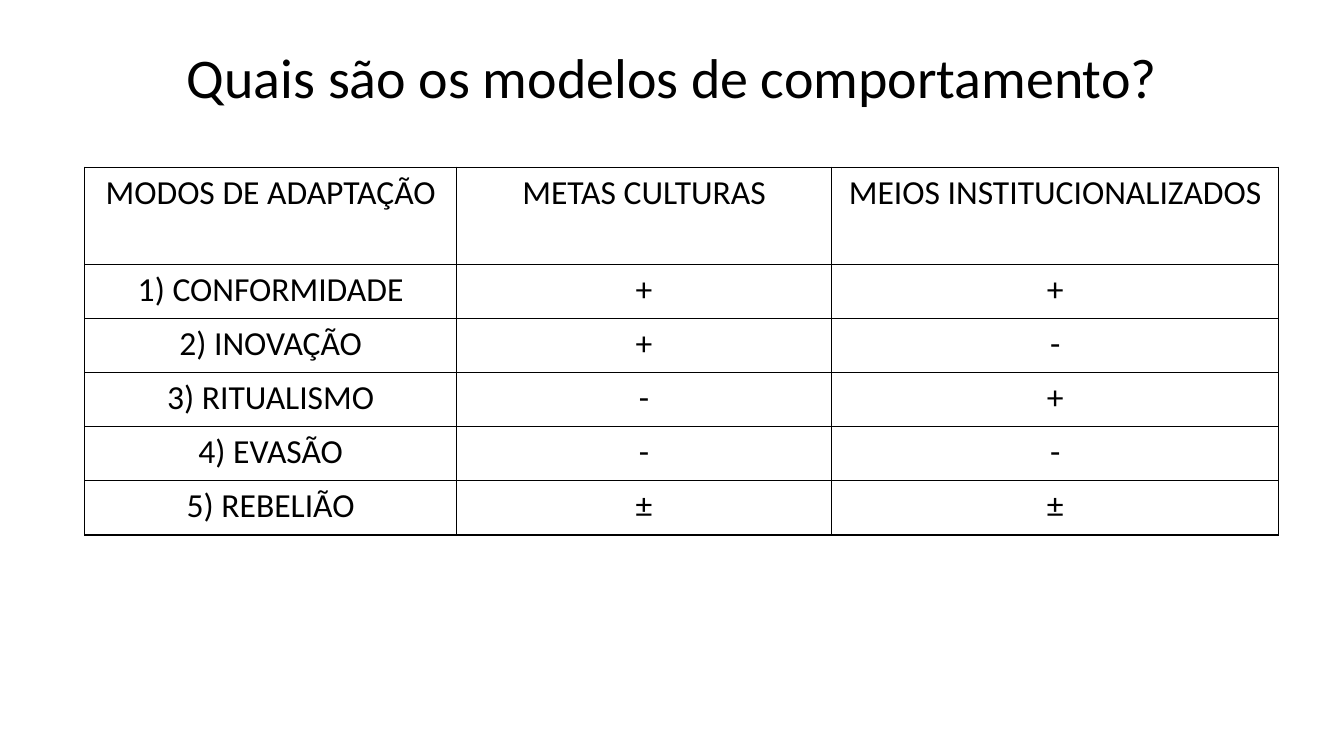
from dataclasses import dataclass

import pptx
import pptx.dml.color
import pptx.enum.text
import pptx.oxml
import pptx.oxml.ns
import pptx.util
from pptx.util import Pt


@dataclass(frozen=True)
class Theme:
    font: str = "Calibri"
    ink: str = "000000"
    paper: str = "FFFFFF"
    title_size: int = 40
    cell_size: int = 24
    border: int = 1


THEME = Theme()
COLUMN_WIDTHS = (265.7, 267.8, 319.5)
HEADER_HEIGHT, ROW_HEIGHT = 69.7, 38.6
ROWS = (
    ("MODOS DE ADAPTAÇÃO", "METAS CULTURAS", "MEIOS INSTITUCIONALIZADOS"),
    ("1) CONFORMIDADE", "+", "+"),
    ("2) INOVAÇÃO", "+", "-"),
    ("3) RITUALISMO", "-", "+"),
    ("4) EVASÃO", "-", "-"),
    ("5) REBELIÃO", "±", "±"),
)


def rgb(value):
    return pptx.dml.color.RGBColor.from_string(value)


def write(tf, text, size, line_spacing, space_after=0):
    p = tf.paragraphs[0]
    p.alignment = pptx.enum.text.PP_ALIGN.CENTER
    p.line_spacing = line_spacing
    p.space_after = Pt(space_after)
    r = p.add_run()
    r.text = text
    r.font.name = THEME.font
    r.font.size = Pt(size)
    r.font.color.rgb = rgb(THEME.ink)


def add_title(s, text):
    tf = s.shapes.add_textbox(Pt(79.2), Pt(13.7), Pt(801.4), Pt(87.8)).text_frame
    tf.word_wrap = True
    tf.vertical_anchor = pptx.enum.text.MSO_ANCHOR.MIDDLE
    write(tf, text, THEME.title_size, 0.9)


def add_borders(cell):
    """Draw all four cell edges; they must come before the fill in tcPr."""
    tc_pr = cell._tc.get_or_add_tcPr()
    for i, side in enumerate(("lnL", "lnR", "lnT", "lnB")):
        tc_pr.insert(i, pptx.oxml.parse_xml(
            f'<a:{side} {pptx.oxml.ns.nsdecls("a")} w="{Pt(THEME.border)}">'
            f'<a:solidFill><a:srgbClr val="{THEME.ink}"/></a:solidFill>'
            f'</a:{side}>'))


def fill_cell(cell, text):
    cell.margin_left = cell.margin_right = Pt(11.5)
    cell.margin_top, cell.margin_bottom = Pt(1.5), Pt(0)
    cell.fill.background()
    add_borders(cell)
    write(cell.text_frame, text, THEME.cell_size, 1.07, space_after=8)


def add_grid(s, rows):
    heights = [HEADER_HEIGHT] + [ROW_HEIGHT] * (len(rows) - 1)
    table = s.shapes.add_table(
        len(rows), len(COLUMN_WIDTHS), Pt(60.5), Pt(119.5),
        Pt(sum(COLUMN_WIDTHS)), Pt(sum(heights))).table
    table.first_row = table.horz_banding = False
    for column, width in zip(table.columns, COLUMN_WIDTHS):
        column.width = Pt(width)
    for row, height, texts in zip(table.rows, heights, rows):
        row.height = Pt(height)
        for cell, text in zip(row.cells, texts):
            fill_cell(cell, text)


def main():
    prs = pptx.Presentation()
    prs.slide_width, prs.slide_height = Pt(960), Pt(540)
    s = prs.slides.add_slide(prs.slide_layouts[6])
    s.background.fill.solid()
    s.background.fill.fore_color.rgb = rgb(THEME.paper)
    add_title(s, "Quais são os modelos de comportamento?")
    add_grid(s, ROWS)
    prs.save("out.pptx")


if __name__ == "__main__":
    main()
